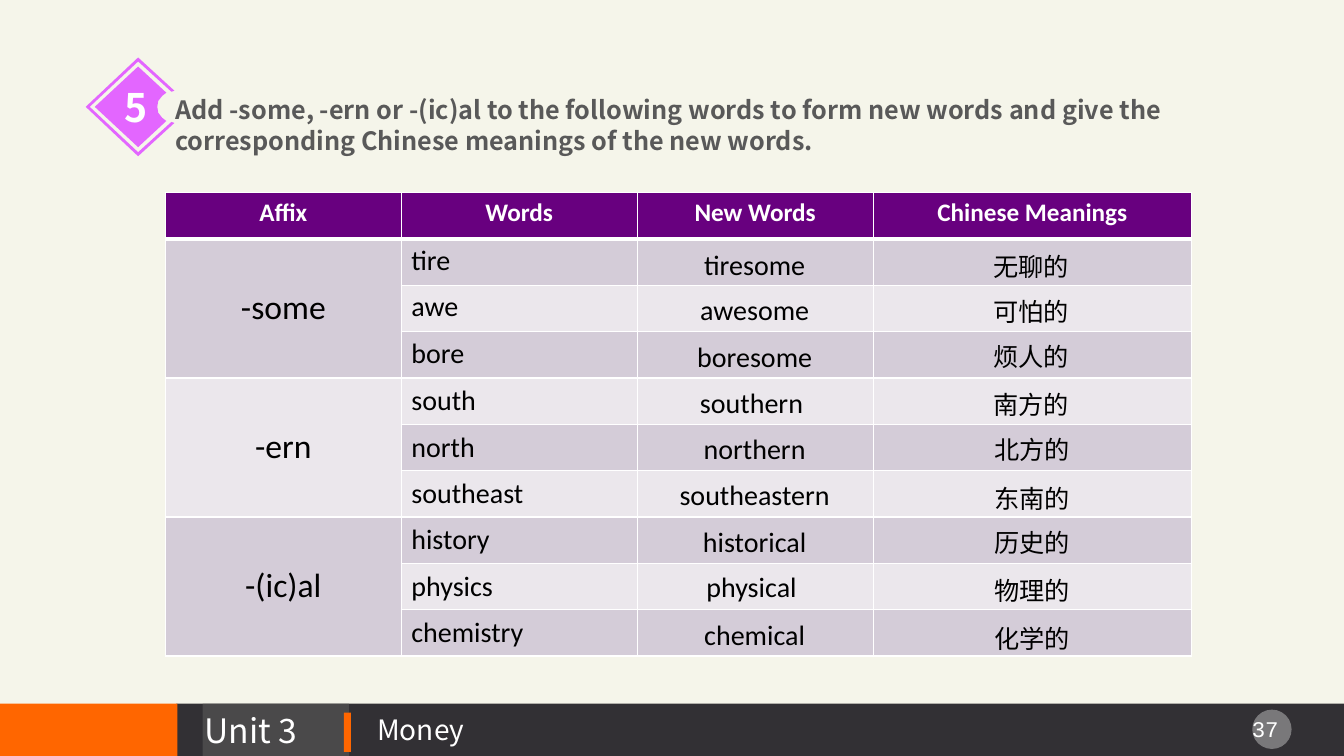
"""Build the Unit 3 affix exercise slide."""
from dataclasses import dataclass
from typing import Any

from lxml import etree
from pptx import Presentation, util as u
from pptx.dml.color import RGBColor
from pptx.enum import shapes as es, text as et
from pptx.oxml import ns

HUES = {
    "page": "F5F5EA", "bar": "323034", "accent": "FF6600", "white": "FFFFFF",
    "gray": "595959", "badge": "E366FF", "head": "68007F",
    "dark": "D4CCD8", "light": "EBE7EC", "ink": "000000",
}
SANS = "Noto Sans CJK SC"
LEFT, MID = et.PP_ALIGN.LEFT, et.PP_ALIGN.CENTER
RECT, OVAL = es.MSO_SHAPE.RECTANGLE, es.MSO_SHAPE.OVAL
Box = tuple[float, float, float, float]


@dataclass
class Block:
    box: Box
    hue: str
    kind: Any = RECT
    alpha: int = 100


@dataclass
class Style:
    size: float
    face: str = "Calibri"
    hue: str = "ink"
    bold: bool = False
    align: Any = LEFT
    lead: float | None = None


@dataclass
class Label:
    words: str
    box: Box
    style: Style
    wrap: bool = True
    anchor: Any = et.MSO_ANCHOR.TOP


@dataclass
class Entry:
    word: str
    made: str
    mean: str
    made_y: float
    mean_y: float
    shift: float = 0


BLOCKS = [
    Block((1.75, 6.98, 11.59, 0.52), "bar"),
    Block((0, 6.98, 1.76, 0.52), "accent"),
    Block((12.42, 7.04, 0.39, 0.39), "white", OVAL, 35),
    Block((2.01, 6.98, 1.45, 0.52), "gray", RECT, 62),
    Block((3.41, 7.07, 0.07, 0.39), "accent"),
]
LABELS = [
    Label("37 ", (12.26, 7.05, 0.71, 0.37),
          Style(16, "Courier New", "white", align=MID)),
    Label("Unit 3", (1.93, 6.99, 1.72, 0.5),
          Style(24, "Noto Sans CJK JP", "white"), anchor=et.MSO_ANCHOR.MIDDLE),
    Label(" Money", (3.58, 7.02, 3.36, 0.44), Style(20, SANS, "white")),
    Label("Add -some, -ern or -(ic)al to the following words to form new words "
          "and give the\ncorresponding Chinese meanings of the new words.",
          (1.64, 0.89, 10.56, 0.71), Style(18, SANS, "gray", True), wrap=False),
]
NUMBER = Label("5", (1.14, 0.78, 0.48, 0.57), Style(28, SANS, "white", True))
CORE = [(0.94, 1.06), (1.37, 0.66), (1.65, 0.92), (1.61, 0.95), (1.57, 1),
        (1.56, 1.06), (1.57, 1.12), (1.61, 1.17), (1.65, 1.2), (1.37, 1.46)]
RIM = [(0.85, 1.06), (1.37, 0.57), (1.73, 0.9), (1.7, 0.91), (1.37, 0.61),
       (0.89, 1.06), (1.37, 1.51), (1.7, 1.21), (1.73, 1.22), (1.37, 1.55)]

HEADS = ["Affix", "Words", "New Words", "Chinese Meanings"]
WIDTHS = [2.34, 2.34, 2.34, 3.16]
ROW = 0.46
GROUPS = {
    "-some": [Entry("tire", "tiresome", "无聊的", 2.41, 2.41),
              Entry("awe", "awesome", "可怕的", 2.85, 2.86),
              Entry("bore", "boresome", "烦人的", 3.32, 3.31)],
    "-ern": [Entry("south", "southern ", "南方的", 3.78, 3.78),
             Entry("north", "northern", "北方的", 4.23, 4.23, 0.02),
             Entry("southeast", "southeastern", "东南的", 4.69, 4.72, 0.02)],
    "-(ic)al": [Entry("history", "historical", "历史的", 5.15, 5.15, 0.02),
                Entry("physics", "physical ", "物理的", 5.6, 5.63, 0.02),
                Entry("chemistry", "chemical", "化学的", 6.08, 6.1, 0.02)],
}
HEAD = Style(18, hue="white", bold=True, align=MID)
AFFIX, WORD = Style(24, align=MID), Style(20)
MADE, MEAN = Style(20, align=MID), Style(18, align=MID, lead=1.1)


def tint(name: str) -> RGBColor:
    """Return the named colour."""
    return RGBColor.from_string(HUES[name])


def place(box: Box) -> list[u.Length]:
    """Turn a box in inches into lengths."""
    return [u.Inches(side) for side in box]


def paint(item: Any, hue: str) -> None:
    """Fill a shape and clear its line and shadow."""
    item.fill.solid()
    item.fill.fore_color.rgb = tint(hue)
    item.line.fill.background()
    item.shadow.inherit = False


def write(frame: Any, words: str, style: Style) -> None:
    """Set text and style every paragraph."""
    frame.text = words
    for para in frame.paragraphs:
        para.alignment = style.align
        if style.lead:
            para.line_spacing = style.lead
        for run in para.runs:
            font = run.font
            font.size, font.name = u.Pt(style.size), style.face
            font.bold, font.color.rgb = style.bold, tint(style.hue)


def add_block(tree: Any, block: Block) -> None:
    """Draw a plain filled shape."""
    item = tree.add_shape(block.kind, *place(block.box))
    paint(item, block.hue)
    if block.alpha < 100:
        for mark in item.fill._xPr.iter(ns.qn("a:srgbClr")):
            etree.SubElement(mark, ns.qn("a:alpha"), val=str(block.alpha * 1000))


def add_label(tree: Any, label: Label) -> None:
    """Draw a text box."""
    frame = tree.add_textbox(*place(label.box)).text_frame
    frame.word_wrap = label.wrap
    frame.auto_size = et.MSO_AUTO_SIZE.SHAPE_TO_FIT_TEXT
    frame.vertical_anchor = label.anchor
    write(frame, label.words, label.style)


def add_badge(tree: Any) -> None:
    """Draw the numbered diamond."""
    group = tree.add_group_shape().shapes
    core, rim = [[tuple(place(dot)) for dot in line] for line in (CORE, RIM)]
    pen = group.build_freeform(*core[0])
    pen.add_line_segments(core[1:])
    pen.move_to(*rim[0])
    pen.add_line_segments(rim[1:])
    paint(pen.convert_to_shape(), "badge")
    add_label(group, NUMBER)


def fill_cell(cell: Any, row: int, hue: str) -> None:
    """Give a cell white borders and a fill."""
    props = cell._tc.get_or_add_tcPr()
    for side in "LRTB":
        thick = (row, side) in ((0, "B"), (1, "T"))
        line = etree.SubElement(props, ns.qn(f"a:ln{side}"),
                                w=str(u.Pt(3 if thick else 1)))
        solid = etree.SubElement(line, ns.qn("a:solidFill"))
        etree.SubElement(solid, ns.qn("a:srgbClr"), val=HUES["white"])
    cell.fill.solid()
    cell.fill.fore_color.rgb = tint(hue)


def add_grid(tree: Any) -> None:
    """Draw the affix table and its answers."""
    count = 1 + sum(map(len, GROUPS.values()))
    box = (1.64, 1.91, sum(WIDTHS), ROW * count)
    grid = tree.add_table(count, len(HEADS), *place(box)).table
    grid.horz_banding = False
    for col, width in enumerate(WIDTHS):
        grid.columns[col].width = u.Inches(width)
    for row in range(count):
        grid.rows[row].height = u.Inches(ROW)
        hue = ("dark" if row % 2 else "light") if row else "head"
        for col in range(len(HEADS)):
            fill_cell(grid.cell(row, col), row, hue)
    for col, head in enumerate(HEADS):
        frame = grid.cell(0, col).text_frame
        write(frame, head, HEAD)
        frame.paragraphs[0].space_after = u.Pt(3.6)
    row = 1
    for affix, entries in GROUPS.items():
        first = grid.cell(row, 0)
        first.merge(grid.cell(row + len(entries) - 1, 0))
        first.vertical_anchor = et.MSO_ANCHOR.MIDDLE
        write(first.text_frame, affix, AFFIX)
        for entry in entries:
            cell = grid.cell(row, 1)
            if row > 3:
                cell.vertical_anchor = et.MSO_ANCHOR.MIDDLE
            write(cell.text_frame, entry.word, WORD)
            add_label(tree, Label(entry.made, (6.33, entry.made_y, 2.31, 0.44), MADE))
            add_label(tree, Label(
                entry.mean, (8.64 + entry.shift, entry.mean_y, 3.17 - entry.shift, 0.41), MEAN))
            row += 1


def main() -> None:
    """Assemble and save the slide."""
    deck = Presentation()
    deck.slide_width, deck.slide_height = u.Inches(13.33), u.Inches(7.5)
    slide = deck.slides.add_slide(deck.slide_layouts[6])
    slide.background.fill.solid()
    slide.background.fill.fore_color.rgb = tint("page")
    for block in BLOCKS:
        add_block(slide.shapes, block)
    for label in LABELS:
        add_label(slide.shapes, label)
    add_badge(slide.shapes)
    add_grid(slide.shapes)
    deck.save("out.pptx")


if __name__ == "__main__":
    main()
